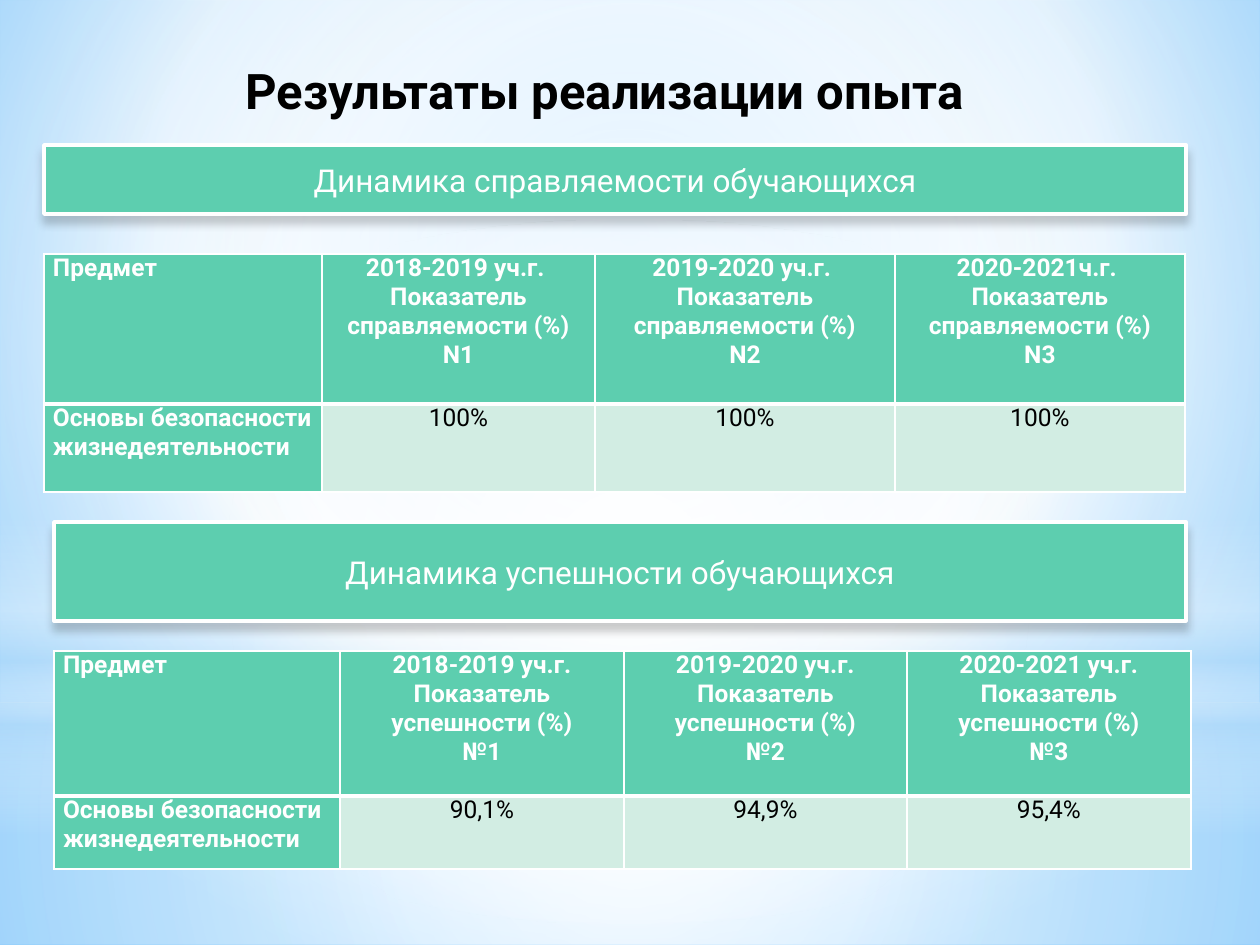
import lxml.etree
import pptx
import pptx.dml.color
import pptx.enum.shapes
import pptx.enum.text
import pptx.oxml.ns
import pptx.util

PX_PER_INCH = 126
FONT = "Roboto"
COLORS = {
    "green": "5DCEAF",
    "mint": "D2EDE3",
    "white": "FFFFFF",
    "black": "000000",
    "sky": "9ED5FF",
    "azure": "5BB9FF",
    "haze": "B4DCFA",
}
ALIGN = pptx.enum.text.PP_ALIGN
ANCHOR = pptx.enum.text.MSO_ANCHOR
SHAPE = pptx.enum.shapes.MSO_SHAPE
SUBJECT = "Основы безопасности жизнедеятельности"


def px(length):
    return pptx.util.Emu(round(length * 914400 / PX_PER_INCH))


def rgb(color):
    return pptx.dml.color.RGBColor.from_string(COLORS[color])


def add_node(parent, tag, **attributes):
    node = lxml.etree.SubElement(parent, pptx.oxml.ns.qn(tag))
    for name, value in attributes.items():
        node.set(name, str(value))
    return node


def add_color(parent, color, opacity=100):
    node = add_node(parent, "a:srgbClr", val=COLORS[color])
    if opacity < 100:
        add_node(node, "a:alpha", val=opacity * 1000)


def set_gradient(fill, owner, stops, focus=None):
    """Stops are (position, colour, opacity); without a focus the blend runs downwards."""
    fill.gradient()
    gradient = owner.element.xpath(".//a:gradFill")[0]
    for child in list(gradient):
        gradient.remove(child)
    stop_list = add_node(gradient, "a:gsLst")
    for position, color, opacity in stops:
        add_color(add_node(stop_list, "a:gs", pos=position * 1000), color, opacity)
    if focus:
        circle = add_node(gradient, "a:path", path="circle")
        sides = {side: value * 1000 for side, value in zip("ltrb", focus)}
        add_node(circle, "a:fillToRect", **sides)
    else:
        add_node(gradient, "a:lin", ang=90 * 60000, scaled=0)


def write(frame, lines, size, color, bold=False, align=ALIGN.CENTER):
    frame.text = "\n".join(lines)
    frame.word_wrap = True
    for para in frame.paragraphs:
        para.alignment = align
        for span in para.runs:
            span.font.name = FONT
            span.font.size = pptx.util.Pt(size)
            span.font.bold = bold
            span.font.color.rgb = rgb(color)


def add_glow(page, kind, top, height, stops, focus=None):
    """Full-width translucent layer of the backdrop."""
    glow = page.shapes.add_shape(kind, 0, px(top), px(1260), px(height))
    glow.shadow.inherit = False
    glow.line.fill.background()
    set_gradient(glow.fill, glow, stops, focus)


def add_backdrop(page):
    set_gradient(page.background.fill, page,
                 [(0, "sky", 100), (60, "white", 100), (100, "azure", 100)], (20, 10, 20, 60))
    center = (50, 50, 50, 50)
    add_glow(page, SHAPE.RECTANGLE, 703, 242,
             [(0, "white", 91), (37, "white", 76), (100, "haze", 79)], center)
    add_glow(page, SHAPE.RECTANGLE, 0, 703,
             [(0, "white", 89), (48, "white", 62), (100, "haze", 79)], center)
    add_glow(page, SHAPE.RECTANGLE, 519, 315,
             [(0, "white", 0), (29, "white", 30), (45, "haze", 40),
              (55, "white", 26), (65, "haze", 60), (100, "white", 0)])
    add_glow(page, SHAPE.OVAL, 220, 703, [(0, "white", 100), (56, "white", 0)], center)


def add_title(page, text):
    box = page.shapes.add_textbox(px(44), px(36), px(1121), px(90))
    box.text_frame.vertical_anchor = ANCHOR.BOTTOM
    write(box.text_frame, [text], 28, "black", bold=True)


def add_banner(page, left, top, width, height, text):
    banner = page.shapes.add_shape(SHAPE.RECTANGLE, px(left), px(top), px(width), px(height))
    banner.fill.solid()
    banner.fill.fore_color.rgb = rgb("green")
    banner.line.color.rgb = rgb("white")
    banner.line.width = pptx.util.Pt(2)
    banner.shadow.inherit = False
    effects = banner.element.xpath("./p:spPr/a:effectLst")[0]
    shadow = add_node(effects, "a:outerShdw", blurRad=pptx.util.Pt(5), dist=pptx.util.Pt(4),
                      dir=90 * 60000, rotWithShape=0)
    add_color(shadow, "black", 20)
    banner.text_frame.vertical_anchor = ANCHOR.MIDDLE
    write(banner.text_frame, [text], 18, "white")


def add_borders(cell, bottom):
    properties = cell._tc.get_or_add_tcPr()
    for tag, width in (("a:lnL", 1), ("a:lnR", 1), ("a:lnT", 1), ("a:lnB", bottom)):
        border = add_node(properties, tag, w=pptx.util.Pt(width))
        add_color(add_node(border, "a:solidFill"), "white")


def add_results(page, left, top, widths, heights, headers, values):
    frame = page.shapes.add_table(2, len(widths), px(left), px(top),
                                  px(sum(widths)), px(sum(heights)))
    table = frame.table
    table.horz_banding = False
    for column, width in zip(table.columns, widths):
        column.width = px(width)
    for row, height in zip(table.rows, heights):
        row.height = px(height)
    content = [[["Предмет"], *headers], [[SUBJECT], *([value] for value in values)]]
    for r, row in enumerate(content):
        for c, lines in enumerate(row):
            cell = table.cell(r, c)
            is_label = r == 0 or c == 0
            cell.margin_left = cell.margin_right = px(9)
            cell.margin_top = cell.margin_bottom = 0
            add_borders(cell, 3 if r == 0 else 1)
            cell.fill.solid()
            cell.fill.fore_color.rgb = rgb("green" if is_label else "mint")
            write(cell.text_frame, lines, 14, "white" if is_label else "black",
                  bold=is_label, align=ALIGN.CENTER if c else ALIGN.LEFT)


def year_headers(years, measure, mark):
    return [[year, f"Показатель {measure} (%)", f"{mark}{number}"]
            for number, year in enumerate(years, 1)]


def main():
    deck = pptx.Presentation()
    deck.slide_width, deck.slide_height = px(1260), px(945)
    page = deck.slides.add_slide(deck.slide_layouts[6])
    add_backdrop(page)
    add_title(page, "Результаты реализации опыта")

    add_results(page, 44, 254, [278, 273, 300, 290], [150, 88],
                year_headers(["2018-2019 уч.г. ", "2019-2020 уч.г. ", "2020-2021ч.г. "],
                             "справляемости", "N"),
                ["100%"] * 3)
    add_banner(page, 44, 145, 1142, 69, "Динамика справляемости обучающихся")

    add_results(page, 54, 651, [286, 284, 283, 284], [145, 73],
                year_headers(["2018-2019 уч.г.", "2019-2020 уч.г.", "2020-2021 уч.г."],
                             "успешности", "№"),
                ["90,1%", "94,9%", "95,4%"])
    add_banner(page, 54, 522, 1132, 99, "Динамика успешности обучающихся")
    deck.save("out.pptx")


if __name__ == "__main__":
    main()
